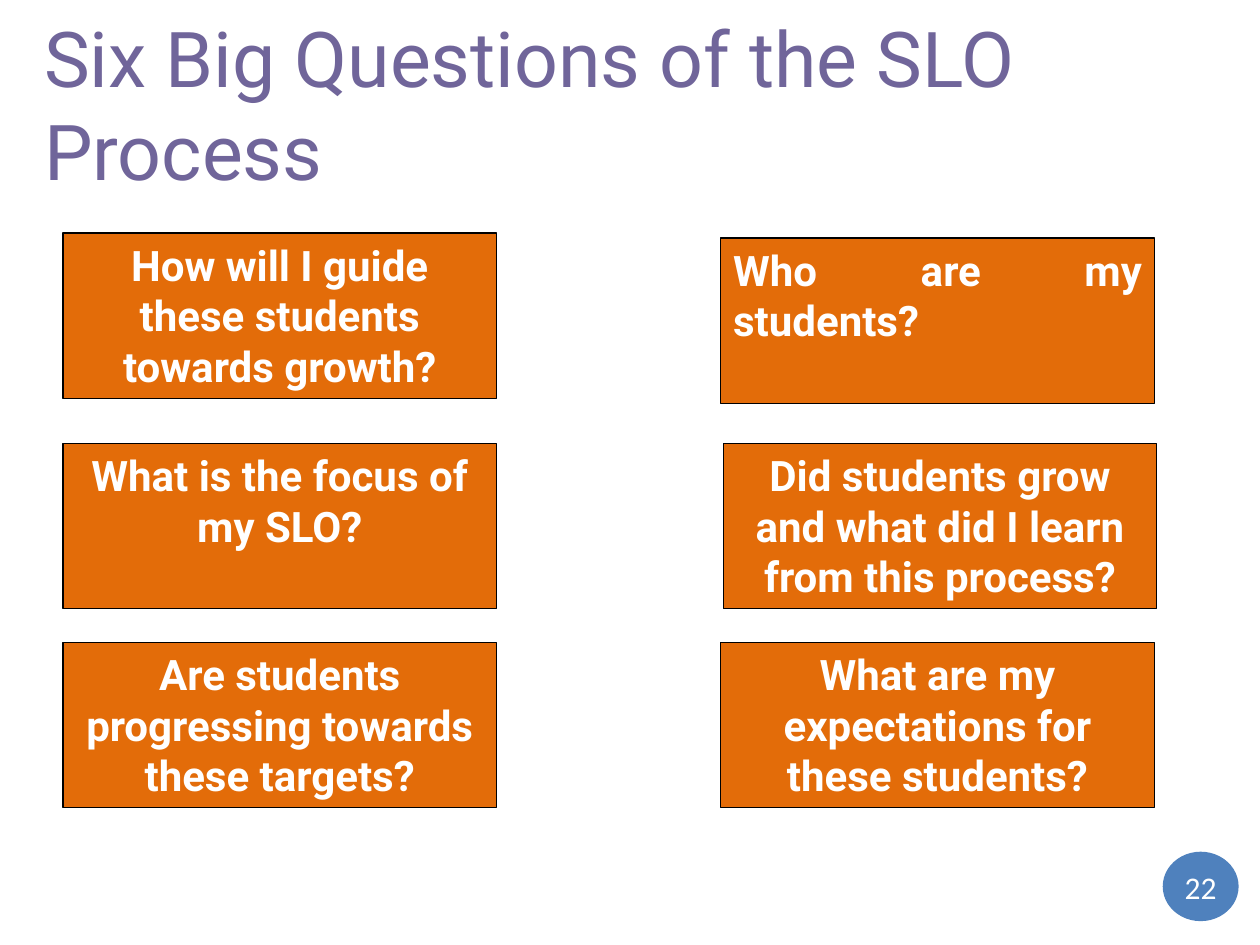
from typing import NamedTuple

import pptx
import pptx.dml.color
import pptx.enum.shapes
import pptx.enum.text
import pptx.util

Cm = pptx.util.Cm
Pt = pptx.util.Pt
RGBColor = pptx.dml.color.RGBColor
Shape = pptx.enum.shapes.MSO_SHAPE
Align = pptx.enum.text.PP_ALIGN
Anchor = pptx.enum.text.MSO_ANCHOR

PURPLE = RGBColor(0x70, 0x65, 0x9A)
ORANGE = RGBColor(0xE3, 0x6C, 0x09)
BLUE = RGBColor(0x4F, 0x81, 0xBD)
BLACK = RGBColor(0, 0, 0)
WHITE = RGBColor(0xFF, 0xFF, 0xFF)

BOX_W, BOX_H = 8.74, 3.33
LEFT_X, RIGHT_X = 1.27, 14.53
ROW_Y = (4.7, 8.94, 12.95)


class Question(NamedTuple):
    text: str
    x: float
    y: float
    align: Align = Align.CENTER


QUESTIONS = [
    Question("How will I guide these students towards growth?", LEFT_X, ROW_Y[0]),
    Question("What is the focus of my SLO?", LEFT_X, ROW_Y[1]),
    Question("Are students progressing towards these targets?", LEFT_X, ROW_Y[2]),
    Question("Who are my students?", RIGHT_X, ROW_Y[0] + 0.1, Align.JUSTIFY),
    Question("Did students grow and what did I learn from this process?",
             RIGHT_X + 0.05, ROW_Y[1]),
    Question("What are my expectations for these students?", RIGHT_X, ROW_Y[2]),
]


def set_margins(tf, horizontal: float, vertical: float) -> None:
    tf.margin_left = tf.margin_right = Cm(horizontal)
    tf.margin_top = tf.margin_bottom = Cm(vertical)


def add_text(tf, text: str, font: str, size: float, color: RGBColor,
             align: Align, bold: bool = False) -> None:
    p = tf.paragraphs[0]
    p.alignment = align
    r = p.add_run()
    r.text = text
    r.font.name = font
    r.font.size = Pt(size)
    r.font.bold = bold
    r.font.color.rgb = color


def add_title(s, text: str) -> None:
    sp = s.shapes.title
    sp.left, sp.top, sp.width, sp.height = Cm(0.64), Cm(0.46), Cm(24.13), Cm(3.73)
    tf = sp.text_frame
    tf.word_wrap = True
    tf.auto_size = pptx.enum.text.MSO_AUTO_SIZE.NONE
    tf.vertical_anchor = Anchor.BOTTOM
    set_margins(tf, 0.25, 0.25)
    add_text(tf, text, "Roboto", 44, PURPLE, Align.LEFT)


def add_question(s, q: Question) -> None:
    sp = s.shapes.add_shape(Shape.RECTANGLE, Cm(q.x), Cm(q.y), Cm(BOX_W), Cm(BOX_H))
    sp.shadow.inherit = False
    sp.fill.solid()
    sp.fill.fore_color.rgb = ORANGE
    sp.line.color.rgb = BLACK
    sp.line.width = Pt(0.75)
    tf = sp.text_frame
    tf.word_wrap = True
    tf.vertical_anchor = Anchor.TOP
    set_margins(tf, 0.25, 0.13)
    add_text(tf, q.text, "Roboto", 24, WHITE, q.align, bold=True)


def add_page_number(s, number: str) -> None:
    sp = s.shapes.add_shape(Shape.OVAL, Cm(23.44), Cm(17.17), Cm(1.53), Cm(1.4))
    sp.shadow.inherit = False
    sp.fill.solid()
    sp.fill.fore_color.rgb = BLUE
    sp.line.fill.background()
    tf = sp.text_frame
    tf.vertical_anchor = Anchor.MIDDLE
    set_margins(tf, 0, 0)
    add_text(tf, number, "Calibri", 18, WHITE, Align.CENTER)


def main() -> None:
    prs = pptx.Presentation()
    prs.slide_width, prs.slide_height = Cm(25.4), Cm(19.05)
    s = prs.slides.add_slide(prs.slide_layouts[5])
    add_title(s, "Six Big Questions of the SLO Process")
    for q in QUESTIONS:
        add_question(s, q)
    add_page_number(s, "22")
    prs.save("out.pptx")


if __name__ == "__main__":
    main()
